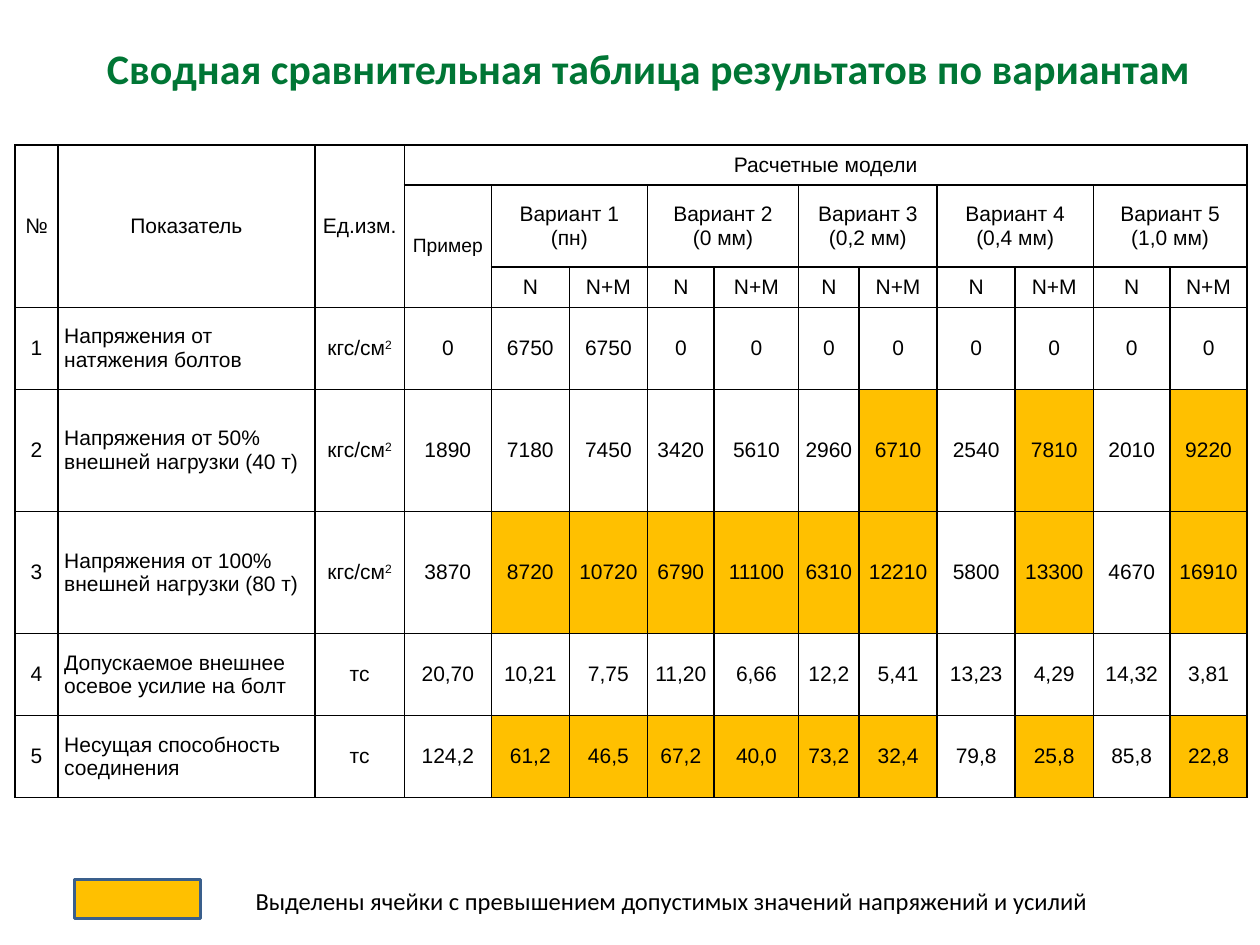
from typing import NamedTuple

from lxml.etree import SubElement
from pptx import Presentation
from pptx.dml.color import RGBColor
from pptx.enum.shapes import MSO_SHAPE as Shape
from pptx.enum.text import MSO_ANCHOR as Anchor, PP_ALIGN as Align
from pptx.oxml.ns import qn
from pptx.util import Inches, Pt

BLACK, GREEN, AMBER, BLUE = "000000", "007635", "FFC000", "3A5F8C"
WIDTHS = [0.34, 2.04, 0.71, 0.69, 0.62, 0.62, 0.53, 0.67, 0.48, 0.62, 0.62, 0.62, 0.61, 0.61]
HEIGHTS = [0.32, 0.65, 0.32, 0.65, 0.97, 0.97, 0.65, 0.65]
FIRST, HEADS = 4, 3


class Head(NamedTuple):
    row: int
    col: int
    rows: int
    cols: int
    text: str
    size: int = 12


class Item(NamedTuple):
    name: str
    unit: str
    values: str
    marks: tuple = ()


class Label(NamedTuple):
    left: float
    top: float
    width: float
    height: float
    text: str
    style: dict


TRIALS = ["Вариант 1\n(пн)", "Вариант 2\n(0 мм)", "Вариант 3 (0,2 мм)",
          "Вариант 4\n(0,4 мм)", "Вариант 5\n(1,0 мм)"]
TOPS = [
    Head(0, 0, 3, 1, "№"),
    Head(0, 1, 3, 1, "Показатель"),
    Head(0, 2, 3, 1, "Ед.изм."),
    Head(0, 3, 1, 11, "Расчетные модели"),
    Head(1, 3, 2, 1, "Пример", 11),
]
ITEMS = [
    Item("Напряжения от натяжения болтов", "кгс/см²",
         "0 6750 6750 0 0 0 0 0 0 0 0"),
    Item("Напряжения от 50% внешней нагрузки (40 т)", "кгс/см²",
         "1890 7180 7450 3420 5610 2960 6710 2540 7810 2010 9220", (6, 8, 10)),
    Item("Напряжения от 100% внешней нагрузки (80 т)", "кгс/см²",
         "3870 8720 10720 6790 11100 6310 12210 5800 13300 4670 16910",
         (1, 2, 3, 4, 5, 6, 8, 10)),
    Item("Допускаемое внешнее осевое усилие на болт", "тс",
         "20,70 10,21 7,75 11,20 6,66 12,2 5,41 13,23 4,29 14,32 3,81"),
    Item("Несущая способность соединения", "тс",
         "124,2 61,2 46,5 67,2 40,0 73,2 32,4 79,8 25,8 85,8 22,8",
         (1, 2, 3, 4, 5, 6, 8, 10)),
]
LABELS = [
    Label(0.75, 0.29, 8.88, 0.5, "Сводная сравнительная таблица результатов по вариантам",
          {"name": "Calibri", "size": Pt(24), "bold": True, "color": GREEN}),
    Label(1.93, 6.98, 6.87, 0.34,
          "Выделены ячейки с превышением допустимых значений напряжений и усилий",
          {"name": "Calibri", "size": Pt(14), "color": BLACK}),
]


def rgb(code: str) -> RGBColor:
    return RGBColor.from_string(code)


def format_font(font, style: dict) -> None:
    for key, value in style.items():
        if key == "color":
            font.color.rgb = rgb(value)
        else:
            setattr(font, key, value)


def add_run(para, text: str, style: dict, raised: bool = False) -> None:
    run = para.add_run()
    run.text = text
    format_font(run.font, style)
    if raised:
        run._r.get_or_add_rPr().set("baseline", "30000")


def write(cell, text: str, size: int = 12, align=Align.CENTER) -> None:
    style = {"name": "Arial", "size": Pt(size), "bold": False, "color": BLACK}
    frame = cell.text_frame
    for num, line in enumerate(text.split("\n")):
        para = frame.add_paragraph() if num else frame.paragraphs[0]
        para.alignment = align
        base, power, _ = line.partition("²")
        add_run(para, base, style)
        if power:
            add_run(para, "2", style, raised=True)


def frame_cell(cell) -> None:
    sides = {"vertical_anchor": Anchor.MIDDLE, "margin_left": Inches(0.05),
             "margin_right": Inches(0.05), "margin_top": 0, "margin_bottom": 0}
    for key, value in sides.items():
        setattr(cell, key, value)
    props = cell._tc.get_or_add_tcPr()
    for tag in ("a:lnL", "a:lnR", "a:lnT", "a:lnB"):
        line = SubElement(props, qn(tag), w=str(Pt(1)))
        fill = SubElement(line, qn("a:solidFill"))
        SubElement(fill, qn("a:srgbClr"), val=BLACK)
    cell.fill.background()


def add_grid(slide) -> None:
    grid = slide.shapes.add_table(
        len(HEIGHTS), len(WIDTHS), Inches(0.12), Inches(1.15),
        Inches(sum(WIDTHS)), Inches(sum(HEIGHTS))).table
    grid.first_row = grid.horz_banding = False
    for col, width in zip(grid.columns, WIDTHS):
        col.width = Inches(width)
    for row, height in zip(grid.rows, HEIGHTS):
        row.height = Inches(height)
    for cell in grid.iter_cells():
        frame_cell(cell)

    heads = list(TOPS)
    for num, trial in enumerate(TRIALS):
        col = FIRST + 2 * num
        heads += [Head(1, col, 1, 2, trial), Head(2, col, 1, 1, "N"),
                  Head(2, col + 1, 1, 1, "N+M")]
    for head in heads:
        cell = grid.cell(head.row, head.col)
        if head.rows * head.cols > 1:
            cell.merge(grid.cell(head.row + head.rows - 1, head.col + head.cols - 1))
        write(cell, head.text, head.size)

    for num, item in enumerate(ITEMS):
        row = HEADS + num
        texts = [str(num + 1), item.name, item.unit, *item.values.split()]
        for col, text in enumerate(texts):
            write(grid.cell(row, col), text, align=Align.LEFT if col == 1 else Align.CENTER)
        for mark in item.marks:
            fill = grid.cell(row, FIRST - 1 + mark).fill
            fill.solid()
            fill.fore_color.rgb = rgb(AMBER)


def add_label(slide, label: Label) -> None:
    box = slide.shapes.add_textbox(*map(Inches, label[:4]))
    box.text_frame.word_wrap = False
    add_run(box.text_frame.paragraphs[0], label.text, label.style)


def add_key(slide) -> None:
    key = slide.shapes.add_shape(
        Shape.RECTANGLE, Inches(0.59), Inches(6.98), Inches(1), Inches(0.31))
    key.shadow.inherit = False
    key.fill.solid()
    key.fill.fore_color.rgb = rgb(AMBER)
    key.line.color.rgb = rgb(BLUE)
    key.line.width = Pt(2)


def main() -> None:
    deck = Presentation()
    deck.slide_width, deck.slide_height = Inches(10), Inches(7.5)
    slide = deck.slides.add_slide(deck.slide_layouts[6])
    add_grid(slide)
    for label in LABELS:
        add_label(slide, label)
    add_key(slide)
    deck.save("out.pptx")


if __name__ == "__main__":
    main()
